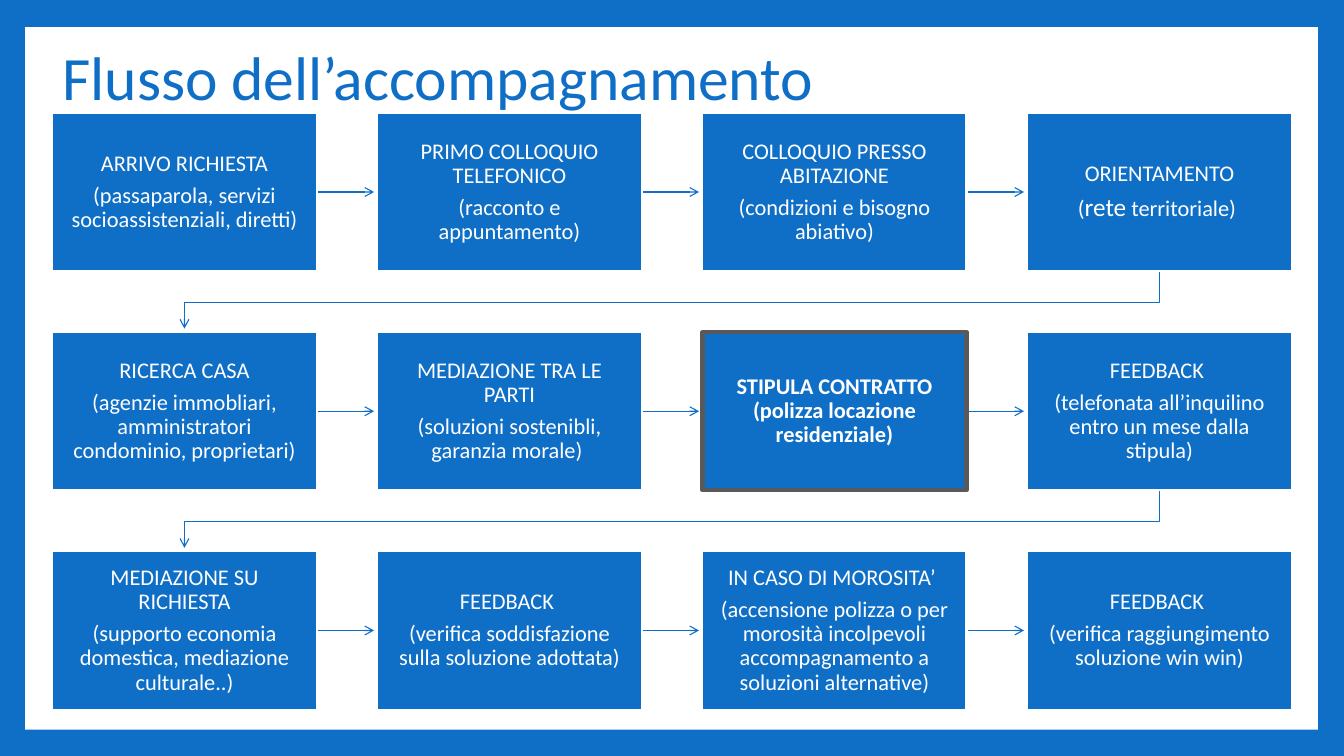
"""Build the housing support flow slide."""
from lxml.etree import SubElement
from pptx import Presentation
from pptx.dml.color import RGBColor
from pptx.enum.shapes import MSO_SHAPE
from pptx.enum.text import MSO_ANCHOR, PP_ALIGN
from pptx.oxml.ns import qn
from pptx.util import Inches, Pt

BLUE, WHITE, GREY = "0F6FC6", "FFFFFF", "595959"
LEFT, TOP, WIDTH, HEIGHT = 0.52, 1.12, 2.62, 1.57
STEP, DROP = (10.19 - LEFT) / 3, (5.47 - TOP) / 2


def paint(form, color):
    form.solid()
    form.fore_color.rgb = RGBColor.from_string(color)


def write(text, par, size=16, big=18, color=WHITE, bold=False, align=PP_ALIGN.CENTER, after=5.6):
    par.alignment = align
    par.line_spacing = 0.9
    par.space_after = Pt(after)
    for spot, part in enumerate(text.split("|")):
        run = par.add_run()
        run.text = part
        run.font.name = "Calibri"
        run.font.size = Pt(big if spot % 2 else size)
        run.font.bold = bold
        paint(run.font.fill, color)


rows = [
    [
        ["ARRIVO RICHIESTA", "(passaparola, servizi socioassistenziali, diretti)"],
        ["PRIMO COLLOQUIO TELEFONICO", "(racconto e appuntamento)"],
        ["COLLOQUIO PRESSO ABITAZIONE", "(condizioni e bisogno abiativo)"],
        ["ORIENTAMENTO", "(|rete| territoriale) "],
    ],
    [
        ["RICERCA CASA", "(agenzie immobliari, amministratori condominio, proprietari)"],
        ["MEDIAZIONE TRA LE PARTI", "(soluzioni sostenibli, garanzia morale) "],
        ["STIPULA CONTRATTO (polizza locazione residenziale)"],
        ["FEEDBACK ", "(telefonata all’inquilino entro un mese dalla stipula)"],
    ],
    [
        ["MEDIAZIONE SU RICHIESTA", "(supporto economia domestica, mediazione culturale..)"],
        ["FEEDBACK ", "(verifica soddisfazione sulla soluzione adottata)"],
        ["IN CASO DI MOROSITA’ ",
         "(accensione polizza o per morosità incolpevoli accompagnamento a soluzioni alternative)"],
        ["FEEDBACK ", "(verifica raggiungimento soluzione win win)"],
    ],
]

deck = Presentation()
deck.slide_width, deck.slide_height = Inches(13.33), Inches(7.5)
slide = deck.slides.add_slide(deck.slide_layouts[6])
paint(slide.background.fill, BLUE)
shapes = slide.shapes

panel = shapes.add_shape(MSO_SHAPE.RECTANGLE, Inches(0.25), Inches(0.27), Inches(12.82), Inches(6.97))
panel.shadow.inherit = False
paint(panel.fill, WHITE)
panel.line.fill.background()

title = shapes.add_textbox(Inches(LEFT), Inches(0.29), Inches(11.87), Inches(1.01)).text_frame
title.word_wrap = True
title.vertical_anchor = MSO_ANCHOR.MIDDLE
write("Flusso dell’accompagnamento", title.paragraphs[0], size=44, color=BLUE,
      align=PP_ALIGN.LEFT, after=0)

for row, cells in enumerate(rows):
    for col, lines in enumerate(cells):
        x, y = LEFT + col * STEP, TOP + row * DROP
        mid, base = x + WIDTH / 2, y + HEIGHT
        points = []
        if col < 3:
            points = [(x + WIDTH, y + HEIGHT / 2), (x + WIDTH + 0.57, y + HEIGHT / 2)]
        elif row < 2:
            first = LEFT + WIDTH / 2
            points = [(mid, base), (mid, base + 0.31), (first, base + 0.31), (first, base + 0.57)]
        if points:
            spots = [(Inches(a), Inches(b)) for a, b in points]
            route = shapes.build_freeform(*spots[0])
            route.add_line_segments(spots[1:], close=False)
            arrow = route.convert_to_shape()
            arrow.shadow.inherit = False
            arrow.fill.background()
            paint(arrow.line.fill, BLUE)
            arrow.line.width = Pt(0.79)
            SubElement(arrow.element.spPr.find(qn("a:ln")), qn("a:tailEnd"), type="arrow")

        key = len(lines) == 1
        box = shapes.add_shape(MSO_SHAPE.RECTANGLE, Inches(x), Inches(y), Inches(WIDTH), Inches(HEIGHT))
        box.shadow.inherit = False
        paint(box.fill, BLUE)
        paint(box.line.fill, GREY if key else WHITE)
        box.line.width = Pt(3 if key else 1.5)
        frame = box.text_frame
        frame.word_wrap = True
        frame.vertical_anchor = MSO_ANCHOR.MIDDLE
        frame.margin_left = frame.margin_right = Inches(0.12)
        frame.margin_top = frame.margin_bottom = Inches(0.12)
        for spot, line in enumerate(lines):
            par = frame.add_paragraph() if spot else frame.paragraphs[0]
            write(line, par, bold=key)

deck.save("out.pptx")
